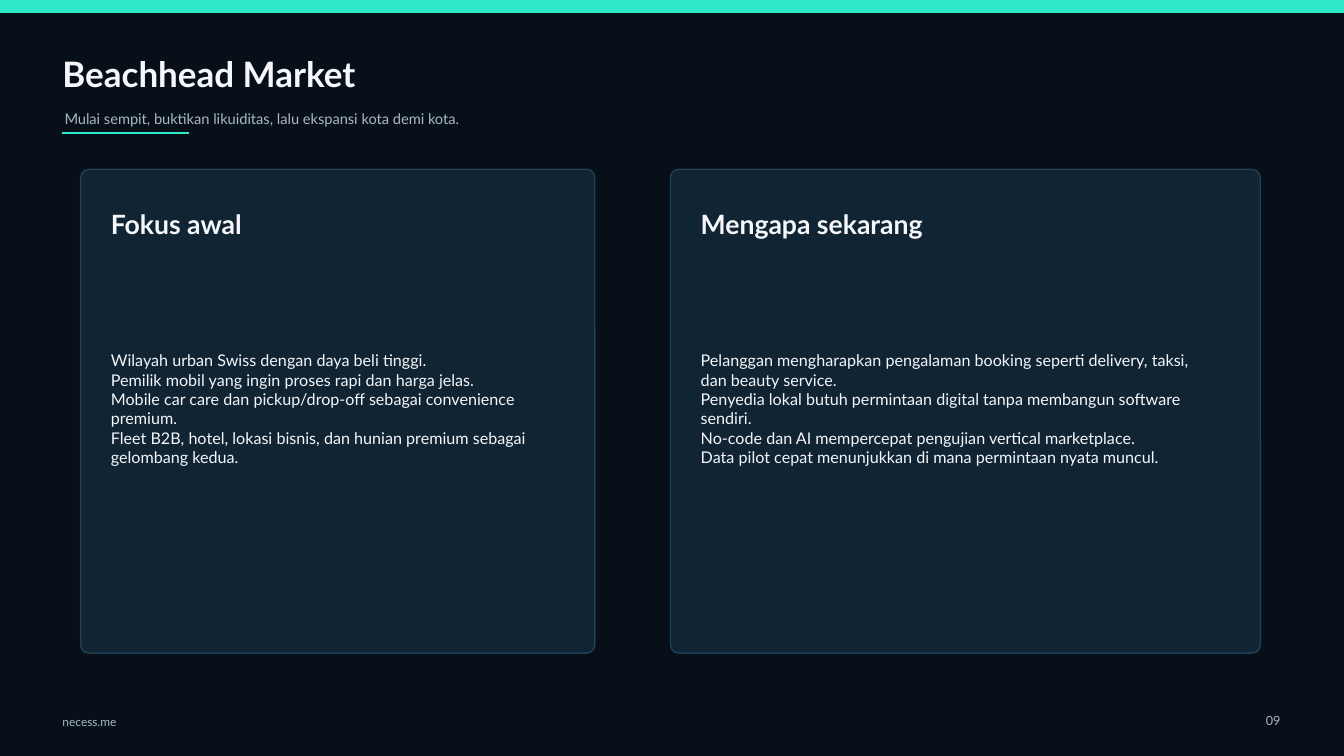
from dataclasses import dataclass

from lxml.etree import SubElement
from pptx import Presentation
from pptx.dml.color import RGBColor
from pptx.enum.shapes import MSO_CONNECTOR, MSO_SHAPE
from pptx.enum.text import MSO_ANCHOR, PP_ALIGN
from pptx.oxml.ns import qn
from pptx.util import Pt

PX = 9144  # EMU per px, 100 px to the inch


@dataclass(frozen=True)
class Theme:
    font: str = "Lato"
    night: RGBColor = RGBColor.from_string("071018")
    mint: RGBColor = RGBColor.from_string("2EE8C8")
    white: RGBColor = RGBColor.from_string("F5F7FA")
    muted: RGBColor = RGBColor.from_string("A9B7C6")
    panel: RGBColor = RGBColor.from_string("102434")
    edge: RGBColor = RGBColor.from_string("25475C")
    title: float = 25
    heading: float = 19
    body: float = 11.5
    subtitle: float = 10.5
    number: float = 9
    footer: float = 8.5


theme = Theme()
deck = Presentation()
deck.slide_width, deck.slide_height = 1333 * PX, 750 * PX
page = deck.slides.add_slide(deck.slide_layouts[6])
page.background.fill.solid()
page.background.fill.fore_color.rgb = theme.night


def add_panel(kind, left, top, width, height, fill, line):
    panel = page.shapes.add_shape(kind, left * PX, top * PX, width * PX, height * PX)
    panel.shadow.inherit = False
    panel.fill.solid()
    panel.fill.fore_color.rgb = fill
    panel.line.color.rgb = line
    panel.line.width = Pt(1)
    return panel


def add_text(lines, left, top, width, height, size, color, bold=False, align=PP_ALIGN.LEFT):
    box = page.shapes.add_textbox(left * PX, top * PX, width * PX, height * PX)
    frame = box.text_frame
    frame.word_wrap = True
    frame.vertical_anchor = MSO_ANCHOR.MIDDLE
    frame.margin_left = frame.margin_top = frame.margin_right = frame.margin_bottom = 0
    frame.text = "\n".join(lines)
    for para in frame.paragraphs:
        para.alignment = align
        para.font.name = theme.font
        para.font.size = Pt(size)
        para.font.bold = bold
        para.font.color.rgb = color


# Backdrop and top band
for height, color in ((750, theme.night), (12, theme.mint)):
    add_panel(MSO_SHAPE.RECTANGLE, 0, 0, 1333, height, color, color)

# Title, subtitle and underline
add_text(["Beachhead Market"], 62, 45, 880, 55, theme.title, theme.white, bold=True)
add_text(["Mulai sempit, buktikan likuiditas, lalu ekspansi kota demi kota."],
         64, 100, 920, 36, theme.subtitle, theme.muted)
underline = page.shapes.add_connector(
    MSO_CONNECTOR.STRAIGHT, 62 * PX, 132 * PX, 187 * PX, 132 * PX)
underline.line.color.rgb = theme.mint
underline.line.width = Pt(2)
SubElement(underline._element.spPr, qn("a:effectLst"))

# Footer
add_text(["necess.me"], 62, 705, 140, 22, theme.footer, theme.muted)
add_text(["09"], 1225, 702, 45, 25, theme.number, theme.muted, align=PP_ALIGN.RIGHT)

# Two cards: left, card width, body width, heading, body
cards = [
    (80, 510, 420, "Fokus awal", [
        "Wilayah urban Swiss dengan daya beli tinggi.",
        "Pemilik mobil yang ingin proses rapi dan harga jelas.",
        "Mobile car care dan pickup/drop-off sebagai convenience premium.",
        "Fleet B2B, hotel, lokasi bisnis, dan hunian premium sebagai gelombang kedua.",
    ]),
    (665, 585, 485, "Mengapa sekarang", [
        "Pelanggan mengharapkan pengalaman booking seperti delivery, taksi, dan beauty service.",
        "Penyedia lokal butuh permintaan digital tanpa membangun software sendiri.",
        "No-code dan AI mempercepat pengujian vertical marketplace.",
        "Data pilot cepat menunjukkan di mana permintaan nyata muncul.",
    ]),
]
for left, width, body_width, heading, body in cards:
    card = add_panel(MSO_SHAPE.ROUNDED_RECTANGLE, left, 168, width, 480, theme.panel, theme.edge)
    card.adjustments[0] = 0.017
    edge_color = card.line.fill._xPr.find(qn("a:solidFill"))[0]
    SubElement(edge_color, qn("a:alpha"), val="85000")
    add_text([heading], left + 30, 205, 300, 35, theme.heading, theme.white, bold=True)
    add_text(body, left + 30, 268, body_width, 275, theme.body, theme.white)

deck.save("out.pptx")
